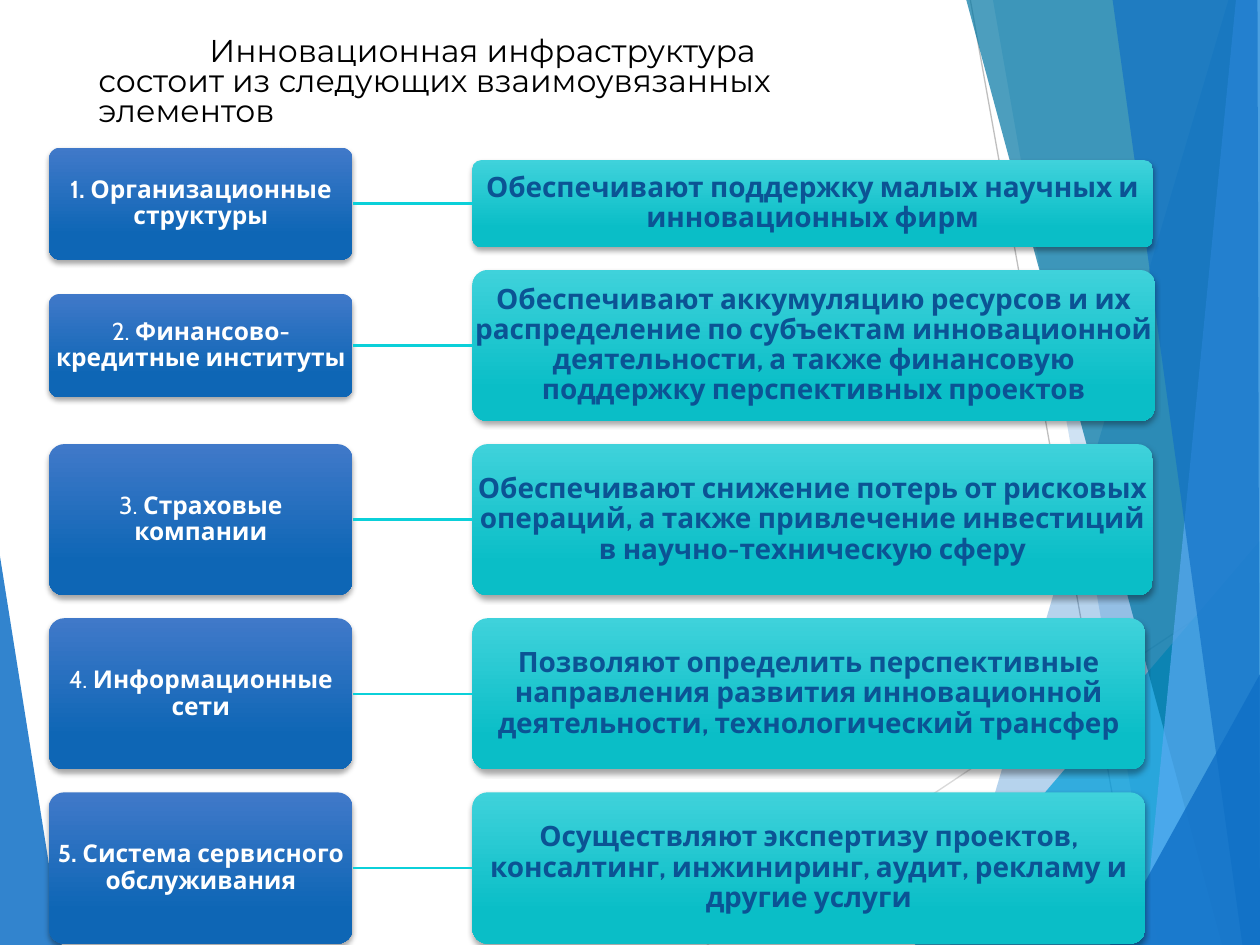
from dataclasses import dataclass

from lxml.etree import SubElement
from pptx import Presentation
from pptx.dml.color import RGBColor
from pptx.enum.shapes import MSO_CONNECTOR, MSO_SHAPE
from pptx.enum.text import MSO_ANCHOR, MSO_AUTO_SIZE, PP_ALIGN
from pptx.oxml.ns import qn
from pptx.util import Pt

WIDE, HIGH = 720, 540
LEFT_X, LEFT_W = 28, 173.5
RIGHT_X = 270
TOP, GAP = 91.5, 13.1


@dataclass
class Facet:
    color: str
    alpha: int
    points: list[tuple[float, float]]


@dataclass
class Ray:
    start: tuple[float, float]
    end: tuple[float, float]
    color: str


@dataclass
class Row:
    mark: str
    bold_mark: bool
    name: str
    role: str
    left_h: float = 86.4
    right_h: float = 86.4
    right_w: float = 388.8


RAYS = [
    Ray((404, HIGH), (WIDE, 329), "D9D9D9"),
    Ray((554.5, 0), (651, HIGH), "BFBFBF"),
]

WING = Facet("0F6FC6", 85, [(0, 318), (35.3, HIGH), (0, HIGH)])

FACETS = [
    Facet("0F6FC6", 30, [(702, 0), (543, HIGH), (WIDE, HIGH), (WIDE, 0)]),
    Facet("0F6FC6", 20, [(567.4, 0), (661.7, HIGH), (WIDE, HIGH), (WIDE, 0)]),
    Facet("009DD9", 72, [(522.7, HIGH), (WIDE, 309), (WIDE, HIGH)]),
    Facet("0076A3", 70, [(552.2, 0), (698.4, HIGH), (WIDE, HIGH), (WIDE, 0)]),
    Facet("59AAF2", 70, [(706.3, 0), (653, HIGH), (WIDE, HIGH), (WIDE, 0)]),
    Facet("0F6FC6", 65, [(635.8, 0), (710, HIGH), (WIDE, HIGH), (718.6, 0)]),
    Facet("0F6FC6", 80, [(634.3, HIGH), (WIDE, 385.2), (WIDE, HIGH)]),
]

ROWS = [
    Row("1. ", True, "Организационные структуры",
        "Обеспечивают поддержку малых научных и инновационных фирм",
        left_h=64, right_h=49.7),
    Row("2. ", False, "Финансово-кредитные институты",
        "Обеспечивают аккумуляцию ресурсов и их распределение по субъектам "
        "инновационной деятельности, а также финансовую поддержку "
        "перспективных проектов", left_h=59, right_w=390.2),
    Row("3. ", False, "Страховые компании",
        "Обеспечивают снижение потерь от рисковых операций, а также "
        "привлечение инвестиций в научно-техническую сферу"),
    Row("4. ", False, "Информационные сети",
        "Позволяют определить перспективные направления развития "
        "инновационной деятельности, технологический трансфер", right_w=384.5),
    Row("5. ", True, "Система сервисного обслуживания",
        "Осуществляют экспертизу проектов, консалтинг, инжиниринг, аудит, "
        "рекламу и другие услуги", right_w=384.5),
]


def paint(target, color: str) -> None:
    target.rgb = RGBColor.from_string(color)


def write(par, text: str, *, font: str = "Cabin", size: float = 14,
          color: str = "FFFFFF", bold: bool = True) -> None:
    run = par.add_run()
    run.text = text
    run.font.name = font
    run.font.size = Pt(size)
    run.font.bold = bold
    paint(run.font.color, color)


def draw_facet(shapes, facet: Facet) -> None:
    spots = [(Pt(x), Pt(y)) for x, y in facet.points]
    pen = shapes.build_freeform(*spots[0], scale=1.0)
    pen.add_line_segments(spots[1:], close=True)
    shape = pen.convert_to_shape()
    shape.shadow.inherit = False
    shape.line.fill.background()
    shape.fill.solid()
    paint(shape.fill.fore_color, facet.color)
    tint = shape.element.spPr.find(f"{qn('a:solidFill')}/{qn('a:srgbClr')}")
    SubElement(tint, qn("a:alpha"), val=str(facet.alpha * 1000))


def draw_line(shapes, ray: Ray, width: float):
    ends = [Pt(n) for n in (*ray.start, *ray.end)]
    line = shapes.add_connector(MSO_CONNECTOR.STRAIGHT, *ends)
    line.line.width = Pt(width)
    paint(line.line.color, ray.color)
    SubElement(line.element.spPr, qn("a:effectLst"))
    return line


def draw_card(shapes, x: float, mid: float, wide: float, high: float,
              colors: tuple[str, str]):
    area = [Pt(n) for n in (x, mid - high / 2, wide, high)]
    card = shapes.add_shape(MSO_SHAPE.ROUNDED_RECTANGLE, *area)
    card.adjustments[0] = 0.1
    card.line.fill.background()
    card.fill.gradient()
    card.fill.gradient_angle = 270
    for stop, color, place in zip(card.fill.gradient_stops, colors, (0, 0.78)):
        paint(stop.color, color)
        stop.position = place
    card.shadow.inherit = False
    glow = SubElement(card.element.spPr.find(qn("a:effectLst")),
                      qn("a:outerShdw"), blurRad=str(Pt(3)), dist=str(Pt(2)),
                      dir="5400000", rotWithShape="0")
    shade = SubElement(glow, qn("a:srgbClr"), val="000000")
    SubElement(shade, qn("a:alpha"), val="35000")

    frame = shapes.add_textbox(*area).text_frame
    frame.word_wrap = True
    frame.vertical_anchor = MSO_ANCHOR.MIDDLE
    frame.margin_left = frame.margin_right = Pt(0.72)
    frame.margin_top = frame.margin_bottom = Pt(0.72)
    par = frame.paragraphs[0]
    par.alignment = PP_ALIGN.CENTER
    par.line_spacing = 0.9
    return card, par


def draw_row(shapes, row: Row, mid: float) -> None:
    left, label = draw_card(shapes, LEFT_X, mid, LEFT_W, row.left_h,
                            ("4079C9", "0E66B5"))
    write(label, row.mark, bold=row.bold_mark)
    write(label, row.name)
    right, note = draw_card(shapes, RIGHT_X, mid, row.right_w, row.right_h,
                            ("3FD2DB", "0ABEC7"))
    write(note, row.role, size=16, color="0B5394")
    link = Ray((LEFT_X + LEFT_W, mid), (RIGHT_X, mid), "0BD0D9")
    line = draw_line(shapes, link, 1.5)
    line.begin_connect(left, 3)
    line.end_connect(right, 1)


def set_title(title) -> None:
    title.left, title.top = Pt(41.8), Pt(18)
    title.width, title.height = Pt(450), Pt(60)
    frame = title.text_frame
    frame.word_wrap = True
    frame.auto_size = MSO_AUTO_SIZE.SHAPE_TO_FIT_TEXT
    frame.vertical_anchor = MSO_ANCHOR.TOP
    par = frame.paragraphs[0]
    par.alignment = PP_ALIGN.LEFT
    par.line_spacing = 0.8
    props = par._p.get_or_add_pPr()
    props.set("marL", str(Pt(7.2)))
    props.set("indent", str(Pt(63.4)))
    write(par, "Инновационная инфраструктура состоит из следующих "
               "взаимоувязанных элементов",
          font="Montserrat", size=18, color="000000", bold=False)


def main() -> None:
    deck = Presentation()
    deck.slide_width, deck.slide_height = Pt(WIDE), Pt(HIGH)
    slide = deck.slides.add_slide(deck.slide_layouts[5])
    shapes = slide.shapes
    set_title(shapes.title)
    draw_facet(shapes, WING)
    for ray in RAYS:
        draw_line(shapes, ray, 0.75)
    for facet in FACETS:
        draw_facet(shapes, facet)
    top = TOP
    for row in ROWS:
        draw_row(shapes, row, top + row.right_h / 2)
        top += row.right_h + GAP
    deck.save("out.pptx")


if __name__ == "__main__":
    main()
